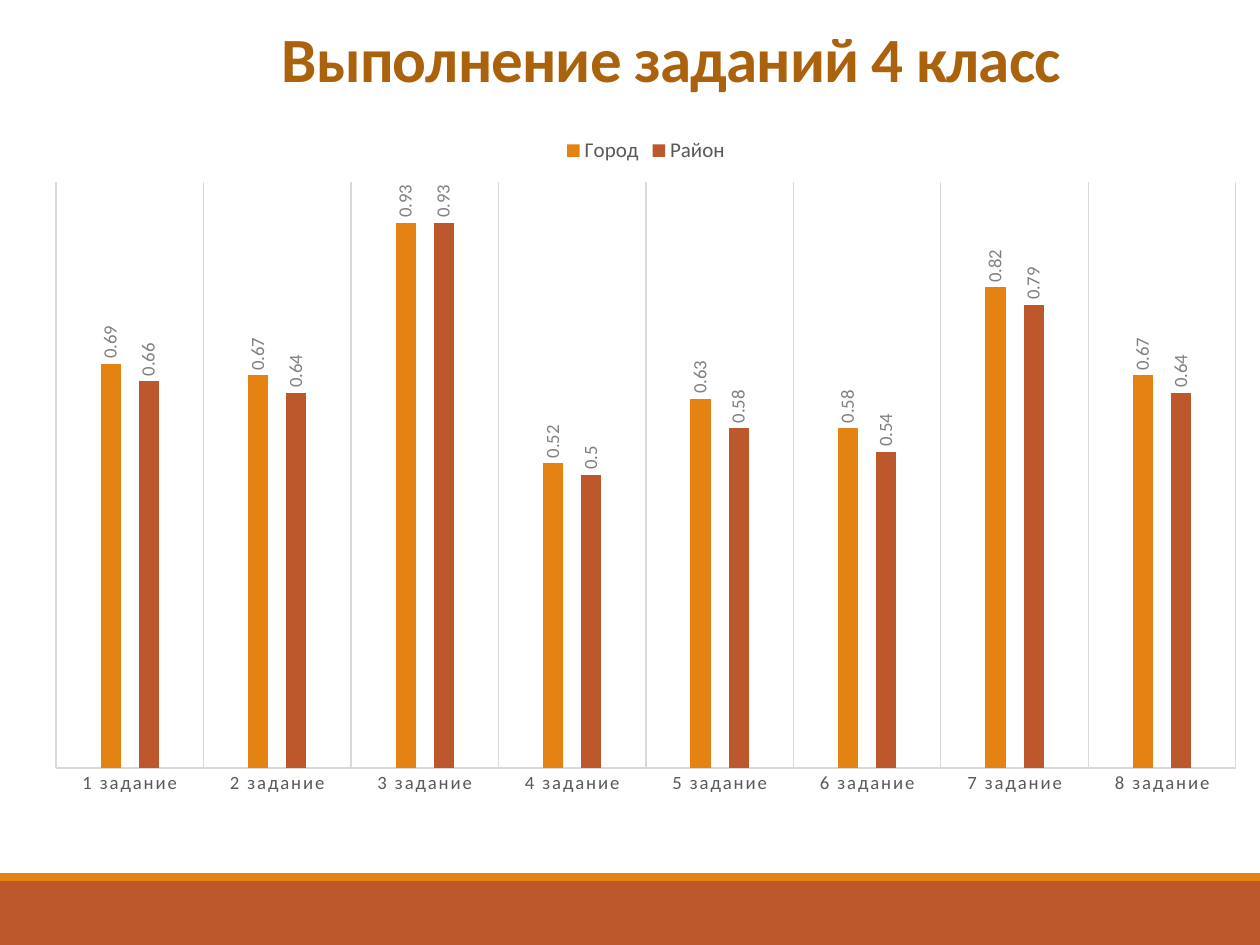
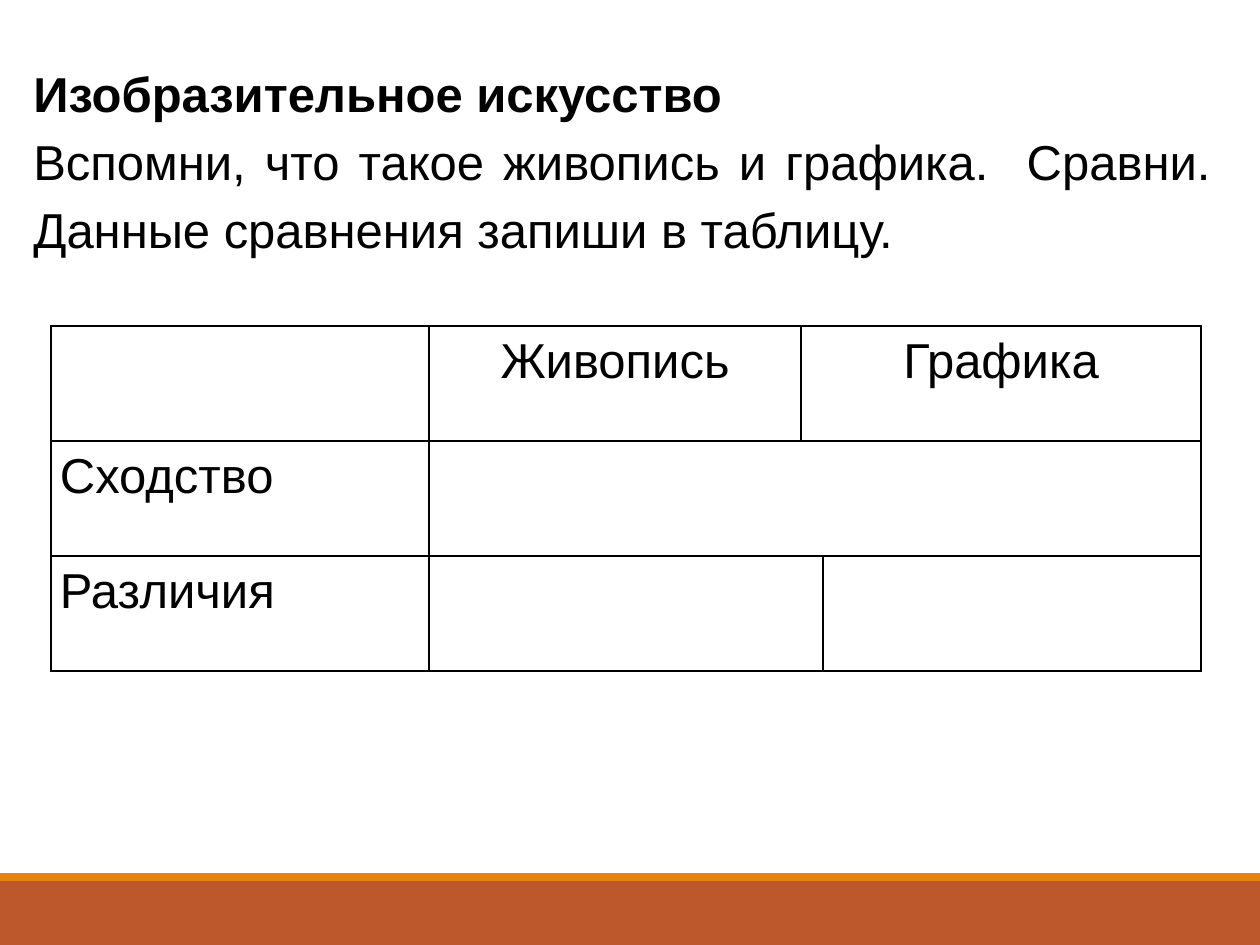
import pptx
import pptx.chart.data
import pptx.dml.color
import pptx.enum.chart
import pptx.enum.shapes
import pptx.enum.text
import pptx.oxml
import pptx.oxml.ns
import pptx.util
import lxml.etree

RGB = pptx.dml.color.RGBColor
Pt = pptx.util.Pt
ALIGN = pptx.enum.text.PP_ALIGN
qn = pptx.oxml.ns.qn

# Content
TITLE = "Выполнение заданий 4 класс"
TASKS = [f"{number} задание" for number in range(1, 9)]
RESULTS = {
    "Город": [0.69, 0.67, 0.93, 0.52, 0.63, 0.58, 0.82, 0.67],
    "Район": [0.66, 0.64, 0.93, 0.5, 0.58, 0.54, 0.79, 0.64],
}
SUBJECT = "Изобразительное искусство"
EXERCISE = ("Вспомни, что такое живопись и графика.  Сравни. "
            "Данные сравнения запиши в таблицу.")
HEADINGS = {1: "Живопись", 2: "Графика"}
ASPECTS = {1: "Сходство", 2: "Различия"}
MERGES = [((0, 2), (0, 3)), ((1, 1), (1, 3)), ((2, 1), (2, 2))]

# Look and measures (126 px to the inch)
WHITE, BLACK = RGB(255, 255, 255), RGB(0, 0, 0)
ORANGE, RUST, BROWN = RGB(0xE4, 0x83, 0x12), RGB(0xBD, 0x58, 0x2C), RGB(0xAB, 0x62, 0x0D)
AXIS_GREY, LABEL_GREY, LINE_GREY = RGB(0x59, 0x59, 0x59), RGB(0x80, 0x80, 0x80), RGB(0xD9, 0xD9, 0xD9)
PAGE_WIDTH, PAGE_HEIGHT = 1260, 945
BANDS = [(881, 64, RUST), (873, 8, ORANGE)]  # top, height, colour
COLUMNS = [378, 372, 22, 378]
ROW_HEIGHT, ROW_COUNT = 115, 3
CHART = (32, 124, 1228, 685)
PLOT = (56, 182, 1180, 586)
CHART_LABEL_SIZE = 10.64


def px(length):
    return pptx.util.Emu(round(length * 914400 / 126))


def style_font(font, name, size, color, bold=False):
    font.name, font.size, font.bold = name, Pt(size), bold
    font.color.rgb = color


def add_page(deck):
    page = deck.slides.add_slide(deck.slide_layouts[6])
    page.background.fill.solid()
    page.background.fill.fore_color.rgb = WHITE
    for top, height, color in BANDS:
        band = page.shapes.add_shape(pptx.enum.shapes.MSO_SHAPE.RECTANGLE,
                                     0, px(top), px(PAGE_WIDTH), px(height))
        band.shadow.inherit = False
        band.fill.solid()
        band.fill.fore_color.rgb = color
        band.line.fill.background()
    return page


def add_frame(page, *place):
    frame = page.shapes.add_textbox(*map(px, place)).text_frame
    frame.word_wrap = True
    return frame


def write(para, text, align, spacing, *font):
    para.alignment, para.line_spacing = align, spacing
    span = para.add_run()
    span.text = text
    style_font(span.font, *font)
    return span


def fix_plot_area(chart):
    left, top, width, height = CHART
    fractions = {"x": (PLOT[0] - left) / width, "y": (PLOT[1] - top) / height,
                 "w": PLOT[2] / width, "h": PLOT[3] / height}
    area = chart.plots[0]._element.getparent()
    layout = area.find(qn("c:layout"))
    if layout is None:
        layout = lxml.etree.Element(qn("c:layout"))
        area.insert(0, layout)
    manual = lxml.etree.SubElement(layout, qn("c:manualLayout"))
    settings = {"layoutTarget": "inner", "xMode": "edge", "yMode": "edge"}
    settings.update({key: f"{value:.4f}" for key, value in fractions.items()})
    for key, value in settings.items():
        lxml.etree.SubElement(manual, qn(f"c:{key}"), val=value)


def add_results_chart(page):
    data = pptx.chart.data.CategoryChartData()
    data.categories = TASKS
    for name, values in RESULTS.items():
        data.add_series(name, values)
    chart = page.shapes.add_chart(pptx.enum.chart.XL_CHART_TYPE.COLUMN_CLUSTERED,
                                  *map(px, CHART), data).chart
    chart.has_title = False
    style_font(chart.font, "Calibri", 10, BLACK)
    chart.has_legend = True
    chart.legend.position = pptx.enum.chart.XL_LEGEND_POSITION.TOP
    chart.legend.include_in_layout = False
    style_font(chart.legend.font, "Calibri", 12, AXIS_GREY)

    # Axes
    tasks = chart.category_axis
    tasks.major_tick_mark = pptx.enum.chart.XL_TICK_MARK.NONE
    tasks.has_major_gridlines = True
    for line in (tasks.format.line, tasks.major_gridlines.format.line):
        line.color.rgb, line.width = LINE_GREY, Pt(0.75)
    style_font(tasks.tick_labels.font, "Calibri", CHART_LABEL_SIZE, AXIS_GREY)
    tasks._element.find(".//" + qn("a:defRPr")).set("spc", "120")
    scale = chart.value_axis
    scale.minimum_scale, scale.maximum_scale = 0, 1
    scale.has_major_gridlines = False
    scale.visible = False

    # Columns with upright values
    plot = chart.plots[0]
    plot.gap_width, plot.overlap, plot.vary_by_categories = 444, -90, False
    for series, color in zip(plot.series, (ORANGE, RUST)):
        series.format.fill.solid()
        series.format.fill.fore_color.rgb = color
        labels = series.data_labels
        labels.show_value = True
        labels.position = pptx.enum.chart.XL_LABEL_POSITION.OUTSIDE_END
        style_font(labels.font, "Calibri", CHART_LABEL_SIZE, LABEL_GREY)
        body = labels._element.find(".//" + qn("a:bodyPr"))
        body.set("rot", "-5400000")
        body.set("vert", "horz")
    fix_plot_area(chart)


def style_cell(cell):
    cell.margin_left = cell.margin_right = px(9)
    cell.margin_top = cell.margin_bottom = 0
    properties = cell._tc.get_or_add_tcPr()
    for side in ("lnL", "lnR", "lnT", "lnB"):
        border = lxml.etree.SubElement(properties, qn(f"a:{side}"), w=str(Pt(1)))
        fill = lxml.etree.SubElement(border, qn("a:solidFill"))
        lxml.etree.SubElement(fill, qn("a:srgbClr"), val=str(BLACK))
    cell.fill.background()


def add_comparison_table(page):
    table = page.shapes.add_table(ROW_COUNT, len(COLUMNS), px(51), px(326),
                                  px(sum(COLUMNS)), px(ROW_HEIGHT * ROW_COUNT)).table
    table.first_row = table.horz_banding = False
    for column, width in zip(table.columns, COLUMNS):
        column.width = px(width)
    for row in table.rows:
        row.height = px(ROW_HEIGHT)
    for cell in table.iter_cells():
        style_cell(cell)
    for first, last in MERGES:
        table.cell(*first).merge(table.cell(*last))
    entries = [(0, column, text, ALIGN.CENTER) for column, text in HEADINGS.items()]
    entries += [(row, 0, text, ALIGN.JUSTIFY) for row, text in ASPECTS.items()]
    for row, column, text, align in entries:
        para = table.cell(row, column).text_frame.paragraphs[0]
        write(para, text, align, 1.15, "Arial", 28, BLACK)


def main():
    deck = pptx.Presentation()
    deck.slide_width, deck.slide_height = px(PAGE_WIDTH), px(PAGE_HEIGHT)

    # Results by task
    page = add_page(deck)
    frame = add_frame(page, 151, 23, 1040, 79)
    frame.vertical_anchor = pptx.enum.text.MSO_ANCHOR.BOTTOM
    span = write(frame.paragraphs[0], TITLE, ALIGN.CENTER, 0.85, "Calibri", 36, BROWN, True)
    span._r.get_or_add_rPr().set("spc", "-50")
    add_results_chart(page)

    # Comparison exercise
    page = add_page(deck)
    frame = add_frame(page, 21, 49, 1202, 212)
    write(frame.paragraphs[0], SUBJECT, ALIGN.JUSTIFY, 1.15, "Arial", 28, BLACK, True)
    write(frame.add_paragraph(), EXERCISE, ALIGN.JUSTIFY, 1.15, "Arial", 28, BLACK)
    add_comparison_table(page)

    deck.save("out.pptx")


if __name__ == "__main__":
    main()
